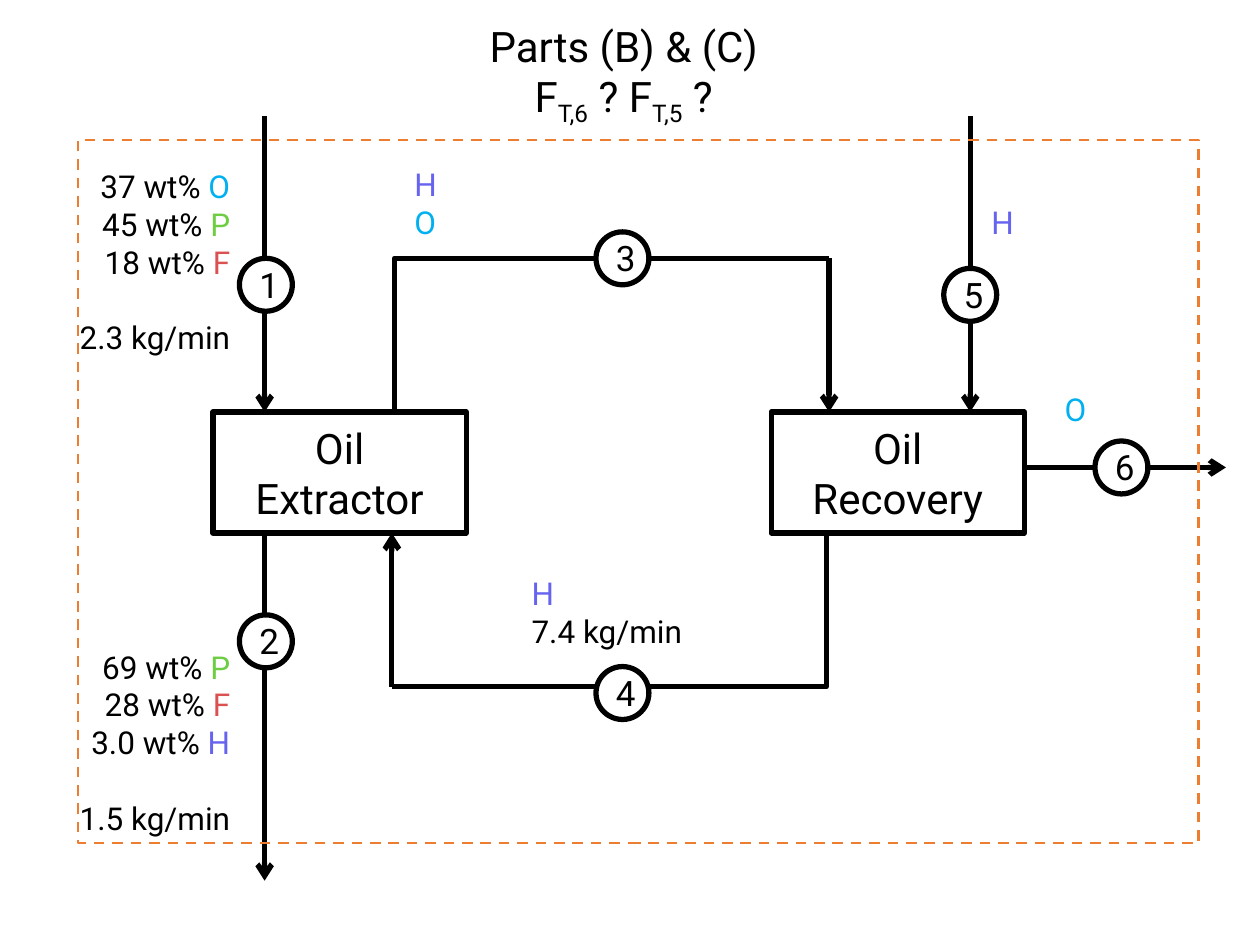
from dataclasses import dataclass

from lxml import etree
from pptx import Presentation
from pptx.dml.color import RGBColor
from pptx.enum.dml import MSO_LINE
from pptx.enum.shapes import MSO_CONNECTOR, MSO_SHAPE
from pptx.enum.text import MSO_ANCHOR, PP_ALIGN
from pptx.oxml.ns import qn
from pptx.util import Inches, Pt

LEFT, CENTER, RIGHT = PP_ALIGN.LEFT, PP_ALIGN.CENTER, PP_ALIGN.RIGHT
STRAIGHT, ELBOW = MSO_CONNECTOR.STRAIGHT, MSO_CONNECTOR.ELBOW
RECTANGLE, OVAL = MSO_SHAPE.RECTANGLE, MSO_SHAPE.OVAL

COLUMNS, ROWS, CELL = 100, 75, 0.1  # square grid cells, in inches
MARKER = 4.2  # stream marker diameter, in cells
ELBOW_SHARE = 600  # where the elbow turns, in 1/100000 of its width


@dataclass(frozen=True)
class Theme:
    font: str = "Roboto"
    heading: int = 24
    number: int = 20
    label: int = 18
    label_gap: float = 21.5
    stroke: float = 3
    boundary_stroke: float = 1.5
    ink: str = "000000"
    paper: str = "FFFFFF"
    boundary: str = "ED7D31"
    oil: str = "00B0F0"
    protein: str = "6ECD43"
    fiber: str = "DB5151"
    hexane: str = "6663EF"


THEME = Theme()
OIL, HEXANE = ("O", THEME.oil), ("H", THEME.hexane)
PROTEIN, FIBER = ("P", THEME.protein), ("F", THEME.fiber)


@dataclass(frozen=True)
class Box:
    """A region in grid cells; areas are placed relative to its corner."""
    left: float
    top: float
    width: float
    height: float

    def area(self, left, top, width, height):
        return Box(self.left + left, self.top + top, width, height)

    def point(self, column, row):
        return cells(self.left + column), cells(self.top + row)

    def frame(self):
        return [cells(n) for n in (self.left, self.top, self.width, self.height)]


def cells(count):
    return Inches(count * CELL)


def color(value):
    return RGBColor.from_string(value)


def write(text_frame, lines, size, alignment=LEFT, gap_before=None):
    """Each line is a list of runs: plain text, (text, color) or (text, color, baseline)."""
    text_frame.word_wrap = True
    for index, line in enumerate(lines):
        paragraph = text_frame.paragraphs[0] if index == 0 else text_frame.add_paragraph()
        paragraph.alignment = alignment
        if index == gap_before:
            paragraph.space_before = Pt(THEME.label_gap)
        for item in line:
            text, ink, baseline = (*((item, THEME.ink) if isinstance(item, str) else item), None)[:3]
            run = paragraph.add_run()
            run.text = text
            run.font.name, run.font.size = THEME.font, Pt(size)
            run.font.color.rgb = color(ink)
            if baseline:
                run.font._element.set("baseline", str(baseline))


def add_text(slide, box, lines, size=THEME.label, alignment=LEFT, gap_before=None):
    shape = slide.shapes.add_textbox(*box.frame())
    write(shape.text_frame, lines, size, alignment, gap_before)


def add_outline(slide, preset, box, ink=THEME.ink, width=THEME.stroke, fill=None):
    shape = slide.shapes.add_shape(preset, *box.frame())
    shape.shadow.inherit = False
    shape.line.color.rgb, shape.line.width = color(ink), Pt(width)
    if fill:
        shape.fill.solid()
        shape.fill.fore_color.rgb = color(fill)
    else:
        shape.fill.background()
    return shape


def add_pipe(slide, start, end, kind=STRAIGHT, arrow=True):
    connector = slide.shapes.add_connector(kind, *start, *end)
    connector.line.color.rgb, connector.line.width = color(THEME.ink), Pt(THEME.stroke)
    properties = connector._element.spPr
    if arrow:
        etree.SubElement(properties.find(qn("a:ln")), qn("a:tailEnd"), type="arrow")
    if kind == ELBOW:
        adjustments = properties.find(qn("a:prstGeom")).find(qn("a:avLst"))
        etree.SubElement(adjustments, qn("a:gd"), name="adj1", fmla=f"val {ELBOW_SHARE}")
    etree.SubElement(properties, qn("a:effectLst"))


def draw_marker(slide, box, number):
    add_outline(slide, OVAL, box, fill=THEME.paper)
    add_text(slide, box.area(0.6, -0.1, 3, 4.4), [[number]], THEME.number, CENTER)


def draw_unit(slide, box, words):
    shape = add_outline(slide, RECTANGLE, box)
    shape.text_frame.vertical_anchor = MSO_ANCHOR.MIDDLE
    write(shape.text_frame, [[word] for word in words], THEME.heading, CENTER)


def draw_extractor(slide, box):
    # Feed, unit and spent solids run down one line
    add_pipe(slide, box.point(21, 0), box.point(21, 23.5))
    add_pipe(slide, box.point(21, 33.1), box.point(21, box.height))
    draw_unit(slide, box.area(16.9, 23.5, 20.1, 9.6), ["Oil", "Extractor"])
    draw_marker(slide, box.area(19, 11.3, MARKER, MARKER), "1")
    draw_marker(slide, box.area(19, 39.6, MARKER, MARKER), "2")
    # Compositions and flow rates
    feed = [["37 wt% ", OIL], ["45 wt% ", PROTEIN], ["18 wt% ", FIBER], ["2.3 kg/min"]]
    solids = [["69 wt% ", PROTEIN], ["28 wt% ", FIBER], ["3.0 wt% ", HEXANE], ["1.5 kg/min"]]
    for top, lines in ((3.6, feed), (41.7, solids)):
        add_text(slide, box.area(0, top, 19.25, 16.2), lines, alignment=RIGHT, gap_before=3)


def draw_loop(slide, box):
    arm = 12.2  # rows from a unit's edge to the loop's edge
    right, bottom = box.width, box.height
    # Oil-rich stream over the top
    add_pipe(slide, box.point(0, arm), box.point(right, 0), ELBOW, arrow=False)
    add_pipe(slide, box.point(right, 0), box.point(right, arm))
    # Solvent returned along the bottom
    add_pipe(slide, box.point(right, bottom - arm), box.point(0, bottom), ELBOW, arrow=False)
    add_pipe(slide, box.point(0, bottom), box.point(0, bottom - arm))
    # Markers and labels
    draw_marker(slide, box.area(16.2, -2.1, MARKER, MARKER), "3")
    draw_marker(slide, box.area(16.2, bottom - 1.6, MARKER, MARKER), "4")
    add_text(slide, box.area(0.8, -7.9, 18.5, 7.1), [[HEXANE], [OIL]])
    add_text(slide, box.area(10.1, 24.6, 18.5, 7.1), [[HEXANE], ["7.4 kg/min"]])


def draw_recovery(slide, box):
    # Solvent make-up from above, oil product to the right
    add_pipe(slide, box.point(15.8, 0), box.point(15.8, 23.5))
    add_pipe(slide, box.point(20, 27.9), box.point(box.width, 27.9))
    draw_unit(slide, box.area(0, 23.5, 20.1, 9.6), ["Oil", "Recovery"])
    draw_marker(slide, box.area(13.7, 12.1, MARKER, MARKER), "5")
    draw_marker(slide, box.area(25.7, 25.8, MARKER, MARKER), "6")
    add_text(slide, box.area(16.5, 6.4, 18.5, 4), [[HEXANE]])
    add_text(slide, box.area(22.3, 21.3, 9.2, 4), [[OIL]])


def draw_title(slide, box):
    def subscript(text):
        return text, THEME.ink, -25000

    question = ["F", subscript("T,6"), " ? F", subscript("T,5"), " ?"]
    add_text(slide, box, [["Parts (B) & (C)"], question], THEME.heading, CENTER)


def draw_boundary(slide, box):
    shape = add_outline(slide, RECTANGLE, box, THEME.boundary, THEME.boundary_stroke)
    shape.line.dash_style = MSO_LINE.DASH


def main():
    presentation = Presentation()
    presentation.slide_width, presentation.slide_height = cells(COLUMNS), cells(ROWS)
    slide = presentation.slides.add_slide(presentation.slide_layouts[6])
    draw_extractor(slide, Box(0, 9.2, 37, 60.7))
    draw_recovery(slide, Box(61.2, 9.2, 36.1, 33.1))
    draw_loop(slide, Box(31.1, 20.5, 34.7, 34))
    draw_title(slide, Box(36.1, 1.1, 26.8, 9.1))
    draw_boundary(slide, Box(6.2, 11.1, 88.9, 55.8))
    presentation.save("out.pptx")


if __name__ == "__main__":
    main()
